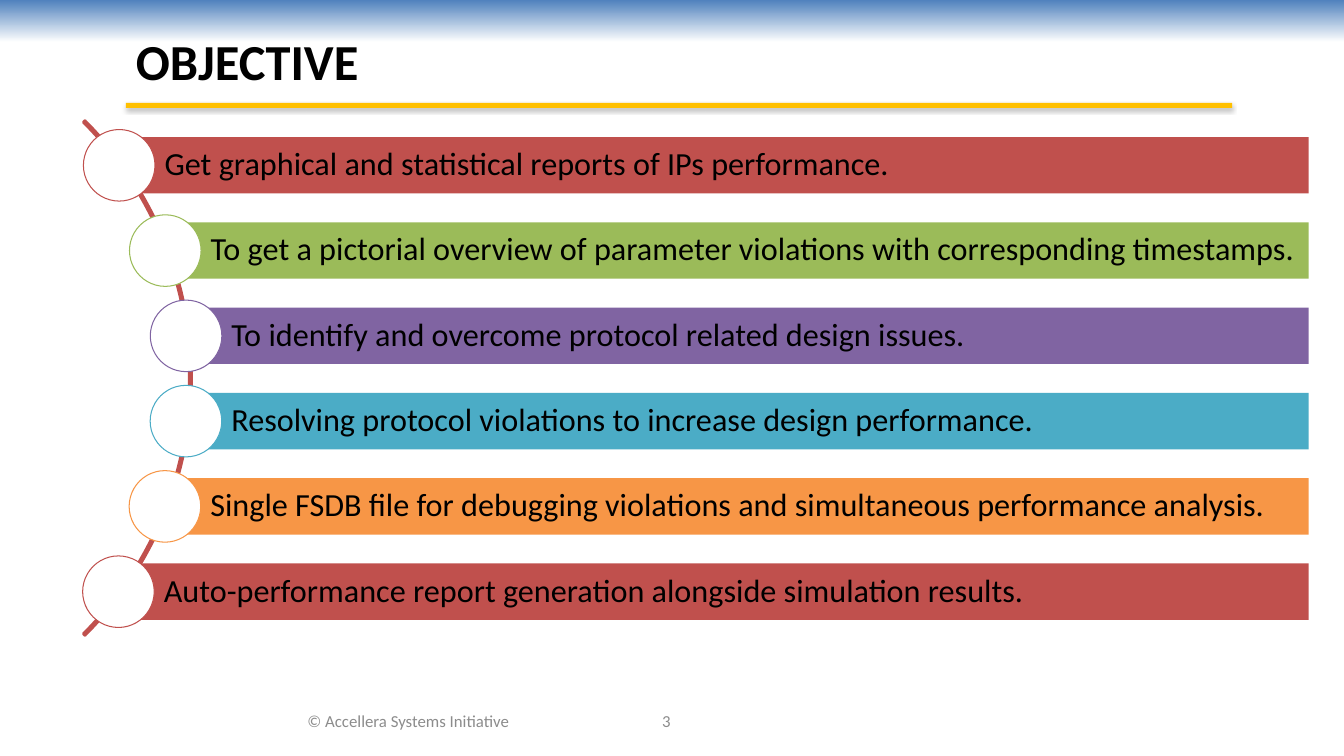
from math import sqrt

from lxml.etree import SubElement
from pptx import Presentation
from pptx.dml.color import RGBColor
from pptx.enum.shapes import MSO_SHAPE
from pptx.enum.text import MSO_ANCHOR, PP_ALIGN
from pptx.oxml.ns import qn
from pptx.util import Inches, Pt

# Content
TITLE = "OBJECTIVE"
OBJECTIVES = [
    ("Get graphical and statistical reports of IPs performance.", "red"),
    ("To get a pictorial overview of parameter violations with corresponding timestamps.", "green"),
    ("To identify and overcome protocol related design issues.", "purple"),
    ("Resolving protocol violations to increase design performance.", "teal"),
    ("Single FSDB file for debugging violations and simultaneous performance analysis.", "orange"),
    ("Auto-performance report generation alongside simulation results.", "red"),
]
FOOTERS = [
    ("© Accellera Systems Initiative", (2.44, 6.95, 3.22, 0.4)),
    ("3", (5.33, 6.95, 2.56, 0.4)),
]
COLORS = {
    "black": "000000", "white": "FFFFFF", "grey": "8C8C8C", "blue": "4F81BD",
    "gold": "FFC000", "red": "C0504D", "green": "9BBB59", "purple": "8064A2",
    "teal": "4BACC6", "orange": "F79646",
}

# Layout, in inches
ARC_CENTER_X, ARC_CENTER_Y, ARC_SIZE = -1.71, 3.75, 7.22
DOT_ORBIT, DOT_SIZE = 3.58, 0.71
BAR_RIGHT, BAR_HEIGHT = 12.98, 0.56
FIRST_ROW, LAST_ROW = 1.64, 5.87

presentation = Presentation()
presentation.slide_width = Inches(13.33)
presentation.slide_height = Inches(7.5)
slide = presentation.slides.add_slide(presentation.slide_layouts[6])


def color(name):
    return RGBColor.from_string(COLORS[name])


def add_shape(kind, box, fill=None, line=None, width=0.75):
    shape = slide.shapes.add_shape(kind, *map(Inches, box))
    shape.shadow.inherit = False
    if fill:
        shape.fill.solid()
        shape.fill.fore_color.rgb = color(fill)
    else:
        shape.fill.background()
    if line:
        shape.line.color.rgb = color(line)
        shape.line.width = Pt(width)
    else:
        shape.line.fill.background()
    return shape


def write(shape, text, size, font_color="black", bold=False,
          align=PP_ALIGN.LEFT, spacing=None, insets=(0.1, 0.05, 0.1, 0.05)):
    frame = shape.text_frame
    frame.word_wrap = True
    frame.vertical_anchor = MSO_ANCHOR.MIDDLE
    (frame.margin_left, frame.margin_top,
     frame.margin_right, frame.margin_bottom) = map(Inches, insets)
    paragraph = frame.paragraphs[0]
    paragraph.alignment = align
    paragraph.line_spacing = spacing
    run = paragraph.add_run()
    run.text = text
    run.font.name = "Calibri"
    run.font.size = Pt(size)
    run.font.bold = bold
    run.font.color.rgb = color(font_color)


# Top gradient band
band = add_shape(MSO_SHAPE.RECTANGLE, (0, 0, 13.33, 0.42))
band.fill.gradient()
band.fill.gradient_angle = 270
for stop, name, position in zip(band.fill.gradient_stops, ("blue", "white"), (0, 1)):
    stop.color.rgb = color(name)
    stop.position = position

# Footer and slide number
for text, box in FOOTERS:
    footer = slide.shapes.add_textbox(*map(Inches, box))
    write(footer, text, 12, font_color="grey", align=PP_ALIGN.CENTER)

# Title with its shadowed rule
title = slide.shapes.add_textbox(*map(Inches, (1.25, 0.21, 10.83, 0.86)))
write(title, TITLE, 36, bold=True, spacing=0.9)
rule = add_shape(MSO_SHAPE.RECTANGLE, (1.25, 1.02, 10.97, 0.05), fill="gold")
effects = rule._element.spPr.find(qn("a:effectLst"))
shadow = SubElement(effects, qn("a:outerShdw"), blurRad=str(Pt(3.1)),
                    dist=str(Pt(1.8)), dir="5400000", rotWithShape="0")
shadow_color = SubElement(shadow, qn("a:srgbClr"), val=COLORS["black"])
SubElement(shadow_color, qn("a:alpha"), val="35000")

# Arc behind the list
arc = add_shape(
    MSO_SHAPE.BLOCK_ARC,
    (ARC_CENTER_X - ARC_SIZE / 2, ARC_CENTER_Y - ARC_SIZE / 2, ARC_SIZE, ARC_SIZE),
    line="red", width=2)
for index, value in enumerate((189, 27, 0.003)):
    arc.adjustments[index] = value

# Bars start at the centres of dots that follow the arc
row_step = (LAST_ROW - FIRST_ROW) / (len(OBJECTIVES) - 1)
for row, (text, name) in enumerate(OBJECTIVES):
    y = FIRST_ROW + row * row_step
    x = ARC_CENTER_X + sqrt(DOT_ORBIT ** 2 - (y - ARC_CENTER_Y) ** 2)
    bar = add_shape(MSO_SHAPE.RECTANGLE,
                    (x, y - BAR_HEIGHT / 2, BAR_RIGHT - x, BAR_HEIGHT), fill=name)
    write(bar, text, 23, spacing=0.9, insets=(0.45, 0.06, 0.06, 0.06))
    add_shape(MSO_SHAPE.OVAL,
              (x - DOT_SIZE / 2, y - DOT_SIZE / 2, DOT_SIZE, DOT_SIZE),
              fill="white", line=name)

presentation.save("out.pptx")
